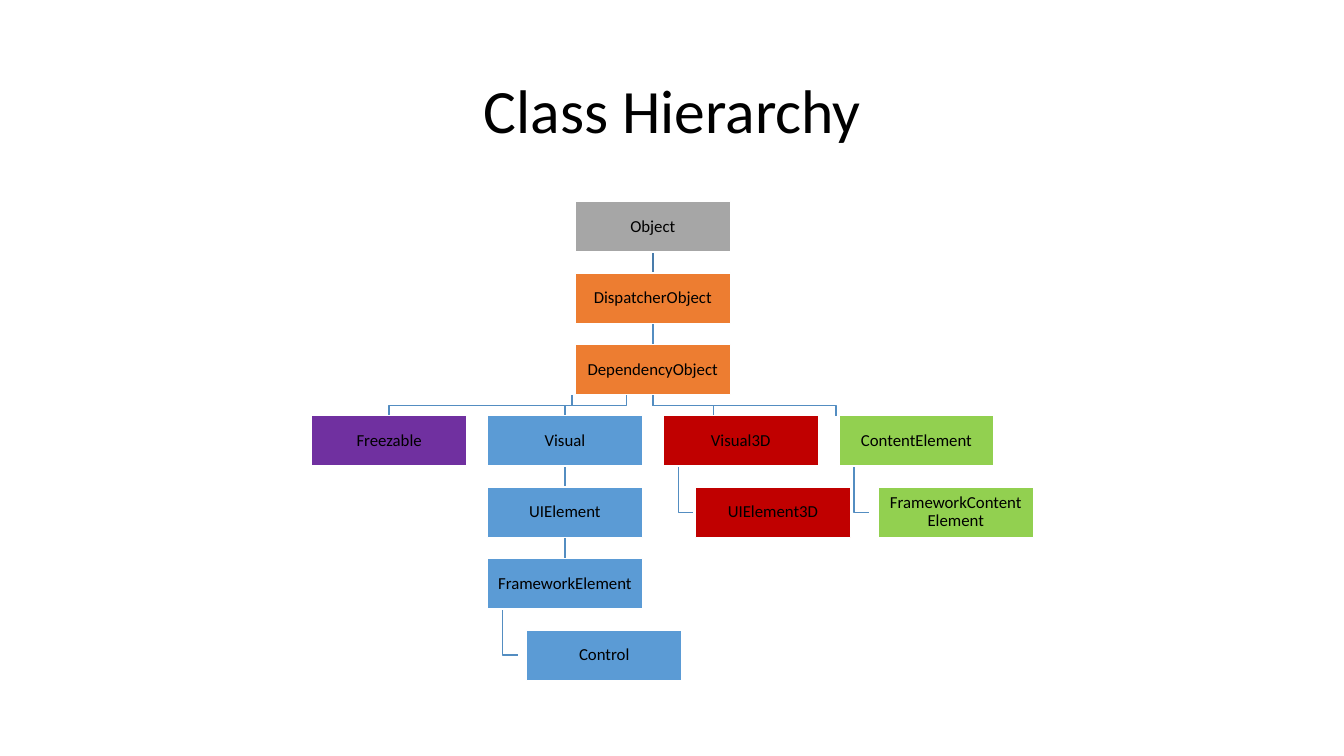
from lxml import etree
from pptx import Presentation
from pptx.dml.color import RGBColor
from pptx.enum.shapes import MSO_CONNECTOR, MSO_SHAPE
from pptx.enum.text import MSO_ANCHOR, PP_ALIGN
from pptx.oxml.ns import qn
from pptx.util import Inches, Pt

RECTANGLE = MSO_SHAPE.RECTANGLE
STRAIGHT = MSO_CONNECTOR.STRAIGHT
MIDDLE = MSO_ANCHOR.MIDDLE
CENTER = PP_ALIGN.CENTER

FONT = "Calibri"
TITLE_LAYOUT = 5
COLORS = {
    "text": "000000", "outline": "FFFFFF", "link": "538DC1", "root_link": "497CAB",
    "gray": "A6A6A6", "orange": "ED7D31", "purple": "7030A0",
    "blue": "5B9BD5", "red": "C00000", "green": "92D050",
}

# All lengths are in inches.
TITLE_BOX = (0.92, 0.4, 11.5, 1.45)
TREE_BOX = (3.09, 2, 7.16, 4.75)
NODE_WIDTH, NODE_HEIGHT = 1.54, 0.5
LAST_ROW = 6
COLUMN_PITCH = 5.23 / 3
INDENT = 0.39
HANG = 0.15

# Class name: column, row, indent, color
NODES = {
    "Object": (1.5, 0, 0, "gray"),
    "DispatcherObject": (1.5, 1, 0, "orange"),
    "DependencyObject": (1.5, 2, 0, "orange"),
    "Freezable": (0, 3, 0, "purple"),
    "Visual": (1, 3, 0, "blue"),
    "UIElement": (1, 4, 0, "blue"),
    "FrameworkElement": (1, 5, 0, "blue"),
    "Control": (1, 6, INDENT, "blue"),
    "Visual3D": (2, 3, 0, "red"),
    "UIElement3D": (2, 4, 0.32, "red"),
    "ContentElement": (3, 3, 0, "green"),
    "FrameworkContent\nElement": (3, 4, INDENT, "green"),
}
STRAIGHT_LINKS = [
    ("Object", "DispatcherObject", "root_link"),
    ("DispatcherObject", "DependencyObject", "link"),
    ("Visual", "UIElement", "link"),
    ("UIElement", "FrameworkElement", "link"),
]
# Child of DependencyObject: start and end, as offsets from the two box centers
BRANCHES = {
    "Freezable": (-0.8, 0),
    "Visual": (-0.26, 0),
    "Visual3D": (0, -0.27),
    "ContentElement": (0, -0.8),
}
HANGING_LINKS = [
    ("FrameworkElement", "Control"),
    ("Visual3D", "UIElement3D"),
    ("ContentElement", "FrameworkContent\nElement"),
]


def color(name):
    return RGBColor.from_string(COLORS[name])


def add_text(paragraph, text, size):
    """Fill a centered paragraph, with a line break at each newline."""
    paragraph.alignment = CENTER
    paragraph.line_spacing = 0.9
    for index, part in enumerate(text.split("\n")):
        if index:
            paragraph.add_line_break()
        run = paragraph.add_run()
        run.text = part
        run.font.name = FONT
        run.font.size = Pt(size)
        run.font.color.rgb = color("text")


def add_title(slide, box):
    title = slide.shapes.title
    title.left, title.top, title.width, title.height = map(Inches, box)
    title.text_frame.vertical_anchor = MIDDLE
    add_text(title.text_frame.paragraphs[0], "Class Hierarchy", 44)


def add_link(slide, points, color_name="link"):
    """Draw a straight connector for two points, a bent line for more."""
    points = [(Inches(x), Inches(y)) for x, y in points]
    if len(points) == 2:
        link = slide.shapes.add_connector(STRAIGHT, *points[0], *points[1])
        etree.SubElement(link._element.spPr, qn("a:effectLst"))
    else:
        builder = slide.shapes.build_freeform(*points[0])
        builder.add_line_segments(points[1:], close=False)
        link = builder.convert_to_shape()
        link.fill.background()
        link.shadow.inherit = False
    link.line.color.rgb = color(color_name)
    link.line.width = Pt(1)


def add_node(slide, text, left, top, fill):
    node = slide.shapes.add_shape(RECTANGLE, *map(Inches, (left, top, NODE_WIDTH, NODE_HEIGHT)))
    node.shadow.inherit = False
    node.fill.solid()
    node.fill.fore_color.rgb = color(fill)
    node.line.color.rgb = color("outline")
    node.line.width = Pt(1)
    frame = node.text_frame
    frame.word_wrap = True
    frame.vertical_anchor = MIDDLE
    frame.margin_left = frame.margin_right = Inches(0.01)
    frame.margin_top = frame.margin_bottom = Inches(0.01)
    add_text(frame.paragraphs[0], text, 12)


def add_tree(slide, box):
    left, top, _, height = box
    row_pitch = (height - NODE_HEIGHT) / LAST_ROW
    corners = {
        name: (left + column * COLUMN_PITCH + indent, top + row * row_pitch)
        for name, (column, row, indent, _) in NODES.items()
    }

    def top_center(name):
        x, y = corners[name]
        return x + NODE_WIDTH / 2, y

    def bottom_center(name):
        x, y = top_center(name)
        return x, y + NODE_HEIGHT

    for parent, child in HANGING_LINKS:
        x = corners[parent][0] + HANG
        start = bottom_center(parent)[1]
        end = corners[child][1] + NODE_HEIGHT / 2
        add_link(slide, [(x, start), (x, end), (x + HANG, end)])

    for child, (start_offset, end_offset) in BRANCHES.items():
        start_x, start_y = bottom_center("DependencyObject")
        end_x, end_y = top_center(child)
        start_x += start_offset
        end_x += end_offset
        middle = (start_y + end_y) / 2
        add_link(slide, [(start_x, start_y), (start_x, middle), (end_x, middle), (end_x, end_y)])

    for parent, child, color_name in STRAIGHT_LINKS:
        add_link(slide, [bottom_center(parent), top_center(child)], color_name)

    for name, (_, _, _, fill) in NODES.items():
        add_node(slide, name, *corners[name], fill)


def main():
    presentation = Presentation()
    presentation.slide_width = Inches(13.33)
    presentation.slide_height = Inches(7.5)
    slide = presentation.slides.add_slide(presentation.slide_layouts[TITLE_LAYOUT])
    add_title(slide, TITLE_BOX)
    add_tree(slide, TREE_BOX)
    presentation.save("out.pptx")


if __name__ == "__main__":
    main()
